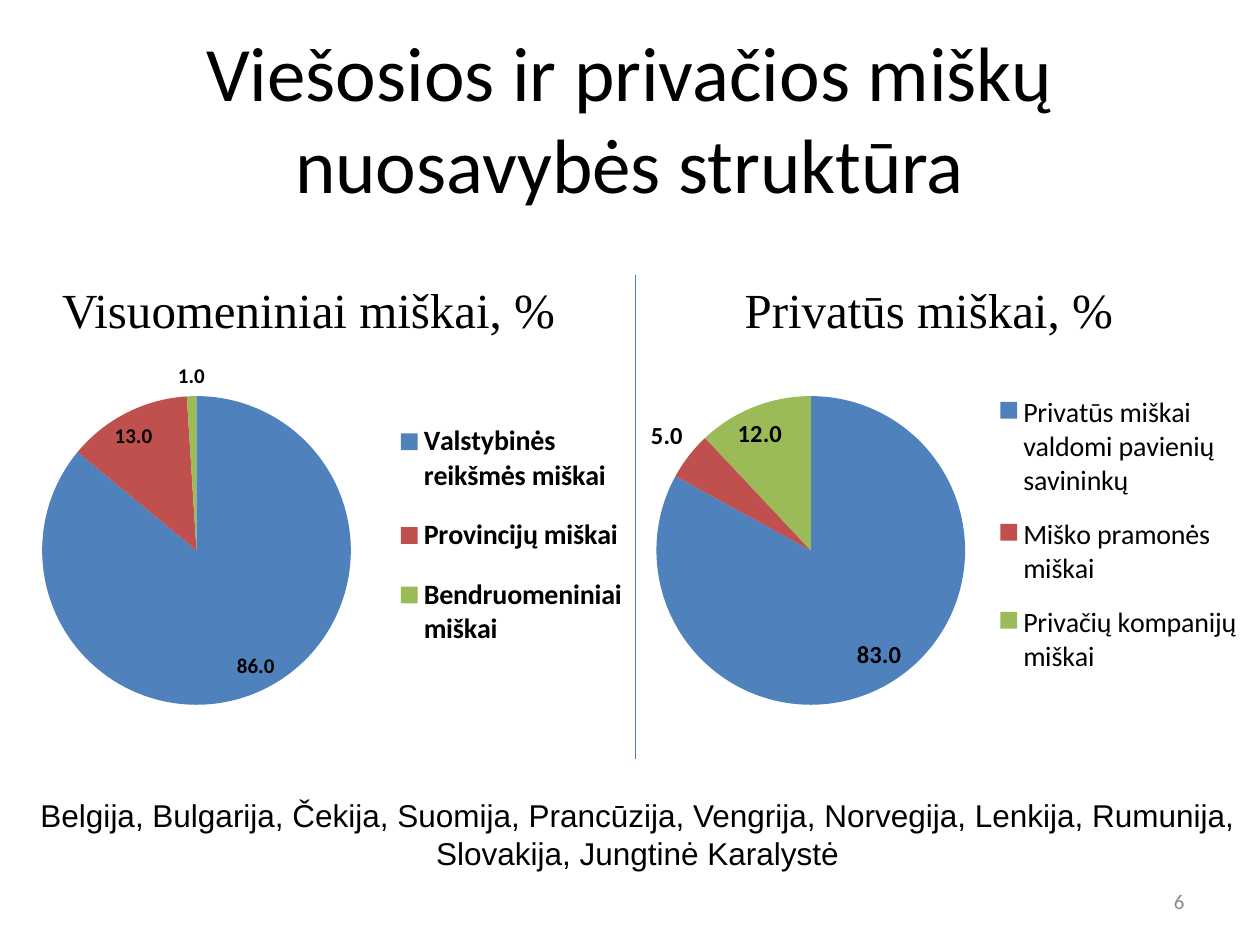
import pptx
import pptx.chart.data
import pptx.dml.color
import pptx.enum.chart
import pptx.enum.shapes
import pptx.enum.text
import pptx.oxml
import pptx.oxml.ns
import pptx.util
from pptx.util import Pt

COLOURS = {
    "text": "000000",
    "number": "8C8C8C",
    "divider": "4B7EBC",
    "blue": "4F81BD",
    "red": "C0504D",
    "green": "9BBB59",
}
SLICES = ("blue", "red", "green")
ALIGN = pptx.enum.text.PP_ALIGN
ANCHOR = pptx.enum.text.MSO_ANCHOR


def rgb(name):
    return pptx.dml.color.RGBColor.from_string(COLOURS[name])


def style_font(font, size, name="Calibri", colour="text", bold=False):
    font.size = Pt(size)
    font.name = name
    font.bold = bold
    font.color.rgb = rgb(colour)


def manual_layout(parent, before, area, inner=False):
    """Place a chart part by fractions of the chart: left, top, width, height."""
    target = '<c:layoutTarget val="inner"/>' if inner else ""
    modes = '<c:xMode val="edge"/><c:yMode val="edge"/>'
    sizes = "".join(f'<c:{key} val="{value}"/>' for key, value in zip("xywh", area))
    layout = pptx.oxml.parse_xml(
        f'<c:layout {pptx.oxml.ns.nsdecls("c")}><c:manualLayout>'
        f"{target}{modes}{sizes}</c:manualLayout></c:layout>"
    )
    for old in parent.findall(pptx.oxml.ns.qn("c:layout")):
        parent.remove(old)
    parent.find(pptx.oxml.ns.qn(before)).addprevious(layout)


class Deck:
    def __init__(self, width, height):
        self.presentation = pptx.Presentation()
        self.presentation.slide_width = Pt(width)
        self.presentation.slide_height = Pt(height)
        self.slide = self.presentation.slides.add_slide(self.presentation.slide_layouts[6])

    def text(self, words, box, size, align=ALIGN.CENTER, anchor=ANCHOR.MIDDLE, **font):
        frame = self.slide.shapes.add_textbox(*map(Pt, box)).text_frame
        frame.word_wrap = True
        frame.vertical_anchor = anchor
        paragraph = frame.paragraphs[0]
        paragraph.alignment = align
        run = paragraph.add_run()
        run.text = words
        style_font(run.font, size, **font)

    def line(self, start, end, colour, width):
        line = self.slide.shapes.add_connector(
            pptx.enum.shapes.MSO_CONNECTOR.STRAIGHT, *map(Pt, start + end)
        )
        line.line.color.rgb = rgb(colour)
        line.line.width = Pt(width)
        line._element.spPr.append(
            pptx.oxml.parse_xml(f'<a:effectLst {pptx.oxml.ns.nsdecls("a")}/>')
        )

    def pie(self, shares, box, label_size, legend_bold, pie_area, legend_area):
        data = pptx.chart.data.CategoryChartData(number_format="0.0")
        data.categories = list(shares)
        data.add_series("Series 1", list(shares.values()))
        chart = self.slide.shapes.add_chart(
            pptx.enum.chart.XL_CHART_TYPE.PIE, *map(Pt, box), data
        ).chart
        chart.has_title = False
        style_font(chart.font, 10)

        chart.has_legend = True
        chart.legend.position = pptx.enum.chart.XL_LEGEND_POSITION.RIGHT
        chart.legend.include_in_layout = False
        style_font(chart.legend.font, 16, bold=legend_bold)

        plot = chart.plots[0]
        plot.vary_by_categories = True
        for index, colour in enumerate(SLICES):
            fill = plot.series[0].points[index].format.fill
            fill.solid()
            fill.fore_color.rgb = rgb(colour)

        labels = plot.series[0].data_labels
        labels.show_value = True
        labels.number_format = "0.0"
        labels.number_format_is_linked = False
        labels.position = pptx.enum.chart.XL_LABEL_POSITION.BEST_FIT
        style_font(labels.font, label_size, bold=True)

        plot_area = chart._chartSpace.chart.plotArea
        manual_layout(plot_area, "c:pieChart", pie_area, inner=True)
        manual_layout(chart.legend._element, "c:overlay", legend_area)


def main():
    deck = Deck(720, 540)
    deck.text("Viešosios ir privačios miškų nuosavybės struktūra", (36, 21.6, 648, 90), 44)
    deck.text("6", (516, 500.5, 168, 28.75), 12, align=ALIGN.RIGHT, colour="number")

    public = {
        "Valstybinės reikšmės miškai": 86,
        "Provincijų miškai": 13,
        "Bendruomeniniai miškai": 1,
    }
    private = {
        "Privatūs miškai valdomi pavienių savininkų": 83,
        "Miško pramonės miškai": 5,
        "Privačių kompanijų miškai": 12,
    }
    deck.pie(public, (4.3, 198, 360, 216), 12, True,
             (0.055, 0.13, 0.49, 0.82), (0.61, 0.14, 0.38, 0.72))
    deck.pie(private, (353.5, 198, 360, 216), 14, False,
             (0.06, 0.13, 0.49, 0.82), (0.6, 0.08, 0.4, 0.84))

    for heading, left in (("Visuomeniniai miškai, %", 8.6), ("Privatūs miškai, %", 363)):
        deck.text(heading, (left, 145.5, 335.5, 62), 28, name="Times New Roman")
    deck.line((363, 157), (363, 434), "divider", 0.75)

    deck.text(
        "Belgija, Bulgarija, Čekija, Suomija, Prancūzija, Vengrija, Norvegija, "
        "Lenkija, Rumunija, Slovakija, Jungtinė Karalystė",
        (8.6, 451.5, 711.4, 51), 18, anchor=ANCHOR.TOP, name="Arial",
    )
    deck.presentation.save("out.pptx")


if __name__ == "__main__":
    main()
